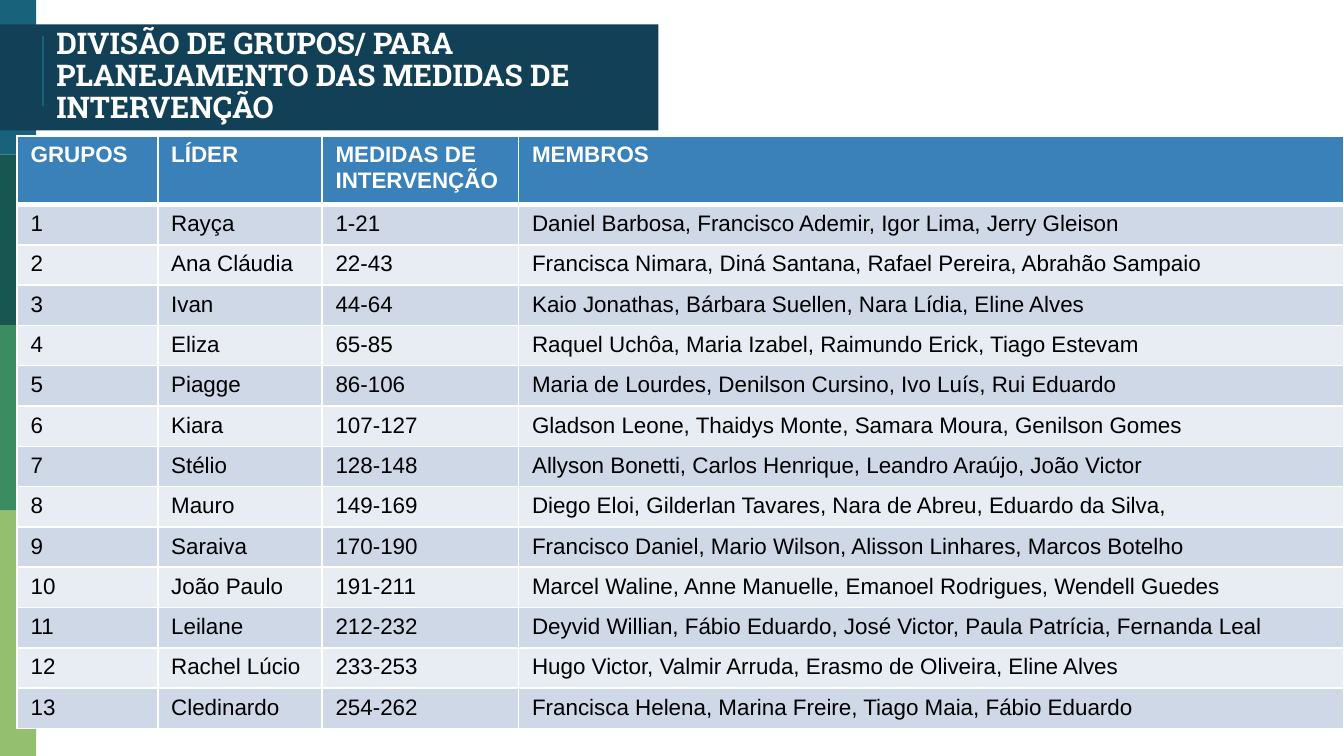
"""Build the slide that lists work groups, leaders, measures and members."""
from typing import NamedTuple

from lxml import etree
from pptx import Presentation
from pptx.dml.color import RGBColor
from pptx.enum import shapes, text
from pptx.oxml import ns
from pptx.util import Pt

WHITE = RGBColor(0xFF, 0xFF, 0xFF)
BLACK = RGBColor(0, 0, 0)
TEAL = RGBColor(0x18, 0x63, 0x7B)
NAVY = RGBColor(0x12, 0x40, 0x57)
PINE = RGBColor(0x16, 0x57, 0x51)
GREEN = RGBColor(0x3B, 0x8D, 0x61)
LIME = RGBColor(0x94, 0xBF, 0x6E)
BLUE = RGBColor(0x3A, 0x81, 0xBA)
TINTS = (RGBColor(0xCE, 0xD8, 0xE7), RGBColor(0xE8, 0xED, 0xF3))


class Band(NamedTuple):
    top: float
    width: float
    height: float
    color: RGBColor


class Group(NamedTuple):
    lead: str
    span: str
    team: str


BANDS = (
    Band(0, 19.44, 82.8, TEAL),
    Band(13, 352.8, 56.9, NAVY),
    Band(82.8, 19.44, 91.44, PINE),
    Band(174.24, 19.44, 99.36, GREEN),
    Band(273.6, 19.44, 131.4, LIME),
)
TITLE = "DIVISÃO DE GRUPOS/ PARA PLANEJAMENTO DAS MEDIDAS DE INTERVENÇÃO"
HEADS = ("GRUPOS", "LÍDER", "MEDIDAS DE INTERVENÇÃO", "MEMBROS")
WIDTHS = (75.3, 88.1, 105.3, 442.1)
HEAD_H, ROW_H = 36.72, 21.6
GROUPS = (
    Group("Rayça", "1-21", "Daniel Barbosa, Francisco Ademir, Igor Lima, Jerry Gleison"),
    Group("Ana Cláudia", "22-43", "Francisca Nimara, Diná Santana, Rafael Pereira, Abrahão Sampaio"),
    Group("Ivan", "44-64", "Kaio Jonathas, Bárbara Suellen, Nara Lídia, Eline Alves"),
    Group("Eliza", "65-85", "Raquel Uchôa, Maria Izabel, Raimundo Erick, Tiago Estevam"),
    Group("Piagge", "86-106", "Maria de Lourdes, Denilson Cursino, Ivo Luís, Rui Eduardo"),
    Group("Kiara", "107-127", "Gladson Leone, Thaidys Monte, Samara Moura, Genilson Gomes"),
    Group("Stélio", "128-148", "Allyson Bonetti, Carlos Henrique, Leandro Araújo, João Victor"),
    Group("Mauro", "149-169", "Diego Eloi, Gilderlan Tavares, Nara de Abreu, Eduardo da Silva,"),
    Group("Saraiva", "170-190", "Francisco Daniel, Mario Wilson, Alisson Linhares, Marcos Botelho"),
    Group("João Paulo", "191-211", "Marcel Waline, Anne Manuelle, Emanoel Rodrigues, Wendell Guedes"),
    Group("Leilane", "212-232", "Deyvid Willian, Fábio Eduardo, José Victor, Paula Patrícia, Fernanda Leal"),
    Group("Rachel Lúcio", "233-253", "Hugo Victor, Valmir Arruda, Erasmo de Oliveira, Eline Alves"),
    Group("Cledinardo", "254-262", "Francisca Helena, Marina Freire, Tiago Maia, Fábio Eduardo"),
)


def write(frame, words: str, *, font: str = "Arial", size: float = 12,
          color: RGBColor = BLACK, bold: bool = False, space: float = 1) -> None:
    para = frame.paragraphs[0]
    para.alignment = text.PP_ALIGN.LEFT
    para.line_spacing = space
    run = para.add_run()
    run.text = words
    run.font.name = font
    run.font.size = Pt(size)
    run.font.bold = bold
    run.font.color.rgb = color


def draw_band(slide, band: Band) -> None:
    rect = slide.shapes.add_shape(shapes.MSO_SHAPE.RECTANGLE, 0, Pt(band.top),
                                  Pt(band.width), Pt(band.height))
    rect.shadow.inherit = False
    rect.fill.solid()
    rect.fill.fore_color.rgb = band.color
    rect.line.fill.background()


def draw_rule(slide):
    rule = slide.shapes.add_connector(shapes.MSO_CONNECTOR.STRAIGHT,
                                      Pt(23), Pt(19.44), Pt(23), Pt(56.9))
    rule.line.color.rgb = TEAL
    rule.line.width = Pt(0.75)
    etree.SubElement(rule.element.spPr, ns.qn("a:effectLst"))
    return rule


def draw_title(slide, below) -> None:
    title = slide.shapes.title
    title.left, title.top = Pt(23), Pt(10)
    title.width, title.height = Pt(335.5), Pt(62.6)
    frame = title.text_frame
    frame.auto_size = text.MSO_AUTO_SIZE.NONE
    frame.word_wrap = True
    frame.vertical_anchor = text.MSO_ANCHOR.MIDDLE
    frame.margin_left = frame.margin_right = Pt(7.2)
    frame.margin_top = frame.margin_bottom = Pt(7.2)
    write(frame, TITLE, font="Roboto Slab", size=16, color=WHITE, bold=True, space=0.9)
    below.element.addnext(title.element)


def edge(cell, side: str, width: float) -> None:
    props = cell._tc.get_or_add_tcPr()
    line = etree.SubElement(props, ns.qn(f"a:ln{side}"), w=str(Pt(width)))
    fill = etree.SubElement(line, ns.qn("a:solidFill"))
    etree.SubElement(fill, ns.qn("a:srgbClr"), val=str(WHITE))


def draw_cell(cell, words: str, row: int) -> None:
    head = row == 0
    for side in "LRTB":
        thick = (head and side == "B") or (row == 1 and side == "T")
        edge(cell, side, 3 if thick else 1)
    cell.fill.solid()
    cell.fill.fore_color.rgb = BLUE if head else TINTS[(row - 1) % 2]
    write(cell.text_frame, words, color=WHITE if head else BLACK, bold=head)


def draw_table(slide) -> None:
    rows = [HEADS] + [(str(num), *group) for num, group in enumerate(GROUPS, 1)]
    table = slide.shapes.add_table(
        len(rows), len(HEADS), Pt(9.2), Pt(72.8), Pt(sum(WIDTHS)),
        Pt(HEAD_H + ROW_H * len(GROUPS))).table
    for col, width in zip(table.columns, WIDTHS):
        col.width = Pt(width)
    for row, words in enumerate(rows):
        table.rows[row].height = Pt(ROW_H if row else HEAD_H)
        for col, word in enumerate(words):
            draw_cell(table.cell(row, col), word, row)


def main() -> None:
    deck = Presentation()
    deck.slide_width, deck.slide_height = Pt(720), Pt(405)
    slide = deck.slides.add_slide(deck.slide_layouts[5])
    for band in BANDS:
        draw_band(slide, band)
    draw_title(slide, draw_rule(slide))
    draw_table(slide)
    deck.save("out.pptx")


if __name__ == "__main__":
    main()
